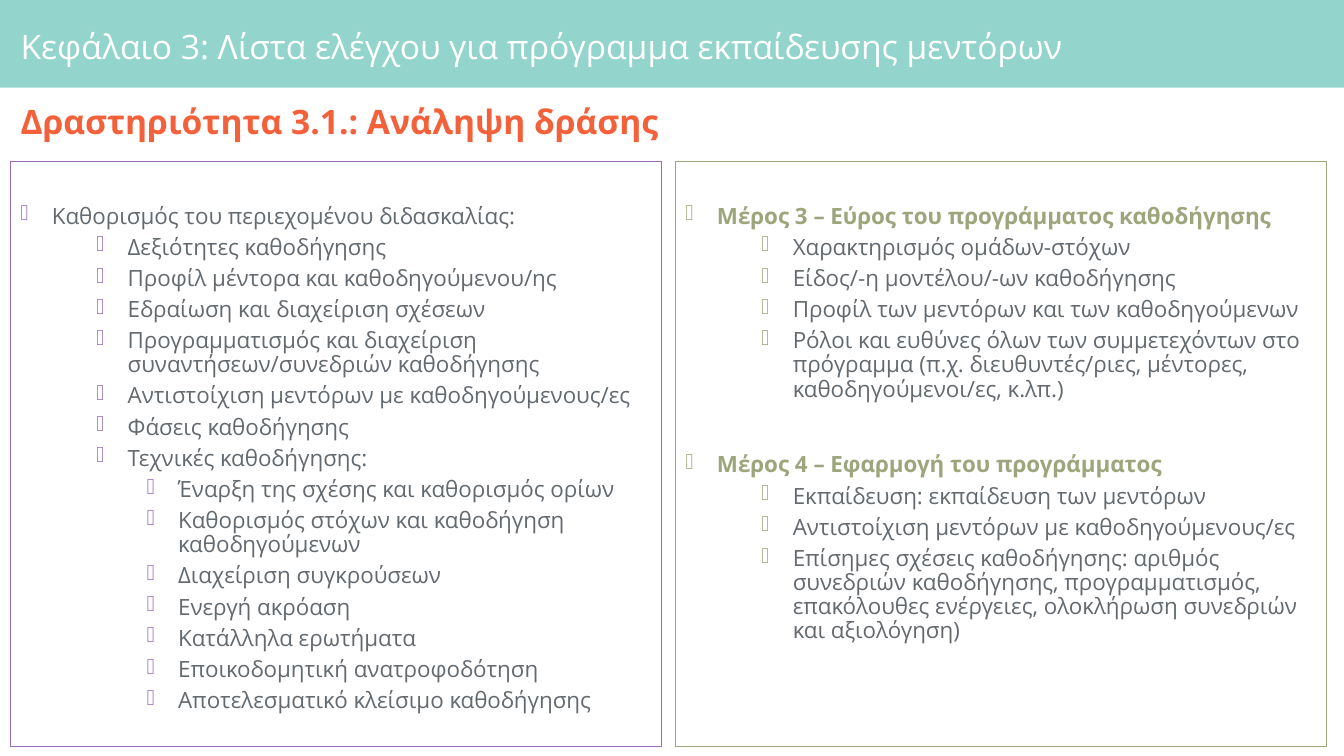
from pptx import Presentation
from pptx.dml.color import RGBColor
from pptx.enum import shapes, text
from pptx.oxml import parse_xml
from pptx.oxml.ns import nsdecls
from pptx.util import Cm, Pt

# Content: panel items are (level, text)
TITLE = "Κεφάλαιο 3: Λίστα ελέγχου για πρόγραμμα εκπαίδευσης μεντόρων"
SUBTITLE = "Δραστηριότητα 3.1.: Ανάληψη δράσης"
TEACHING_CONTENT = [
    (0, "Καθορισμός του περιεχομένου διδασκαλίας:"),
    (1, "Δεξιότητες καθοδήγησης"),
    (1, "Προφίλ μέντορα και καθοδηγούμενου/ης"),
    (1, "Εδραίωση και διαχείριση σχέσεων"),
    (1, "Προγραμματισμός και διαχείριση συναντήσεων/συνεδριών καθοδήγησης"),
    (1, "Αντιστοίχιση μεντόρων με καθοδηγούμενους/ες"),
    (1, "Φάσεις καθοδήγησης"),
    (1, "Τεχνικές καθοδήγησης:"),
    (2, "Έναρξη της σχέσης και καθορισμός ορίων"),
    (2, "Καθορισμός στόχων και καθοδήγηση καθοδηγούμενων"),
    (2, "Διαχείριση συγκρούσεων"),
    (2, "Ενεργή ακρόαση"),
    (2, "Κατάλληλα ερωτήματα"),
    (2, "Εποικοδομητική ανατροφοδότηση"),
    (2, "Αποτελεσματικό κλείσιμο καθοδήγησης"),
]
PROGRAMME_PARTS = [
    (0, "Μέρος 3 – Εύρος του προγράμματος καθοδήγησης"),
    (1, "Χαρακτηρισμός ομάδων-στόχων"),
    (1, "Είδος/-η μοντέλου/-ων καθοδήγησης"),
    (1, "Προφίλ των μεντόρων και των καθοδηγούμενων"),
    (1, "Ρόλοι και ευθύνες όλων των συμμετεχόντων στο πρόγραμμα "
        "(π.χ. διευθυντές/ριες, μέντορες, καθοδηγούμενοι/ες, κ.λπ.)"),
    (0, "Μέρος 4 – Εφαρμογή του προγράμματος"),
    (1, "Εκπαίδευση: εκπαίδευση των μεντόρων"),
    (1, "Αντιστοίχιση μεντόρων με καθοδηγούμενους/ες"),
    (1, "Επίσημες σχέσεις καθοδήγησης: αριθμός συνεδριών καθοδήγησης, "
        "προγραμματισμός, επακόλουθες ενέργειες, ολοκλήρωση συνεδριών και αξιολόγηση)"),
]

THEME = {
    "font": "Open Sans", "heading": 24, "body": 16, "line_spacing": 0.9,
    "band": "93D4CC", "white": "FFFFFF", "orange": "F2613A",
    "grey": "636A6F", "purple": "9869BD", "olive": "9DA57C",
}
# (items, accent, heading colour, bold headings)
PANELS = [
    (TEACHING_CONTENT, "purple", "grey", False),
    (PROGRAMME_PARTS, "olive", "olive", True),
]

# Layout in centimetres
SLIDE_WIDTH, SLIDE_HEIGHT = 33.87, 19.05
MARGIN, PANEL_TOP, PANEL_WIDTH, PANEL_HEIGHT, PANEL_STEP = 0.27, 4.06, 16.41, 14.76, 16.76
LEVEL_INDENT = [0.79, 2.7, 3.97]
BULLET_HANG = 0.79
SPACE_BEFORE = [10, 5, 5]
PART_GAP = 37


def colour(name):
    return RGBColor.from_string(THEME[name])


def set_frame(shape, anchor, insets):
    frame = shape.text_frame
    frame.word_wrap = True
    frame.vertical_anchor = anchor
    frame.margin_left, frame.margin_top, frame.margin_right, frame.margin_bottom = map(Cm, insets)
    return frame


def write(paragraph, words, size, colour_name, bold=False):
    paragraph.line_spacing = THEME["line_spacing"]
    run = paragraph.add_run()
    run.text = words
    run.font.name = THEME["font"]
    run.font.size = Pt(THEME[size])
    run.font.bold = bold
    run.font.color.rgb = colour(colour_name)


def add_checkbox(paragraph, level, accent):
    properties = paragraph._p.get_or_add_pPr()
    properties.set("marL", str(Cm(LEVEL_INDENT[level])))
    properties.set("indent", str(-Cm(BULLET_HANG)))
    for tag in (f'<a:buClr {nsdecls("a")}><a:srgbClr val="{THEME[accent]}"/></a:buClr>',
                f'<a:buFont {nsdecls("a")} typeface="OpenSymbol"/>',
                f'<a:buChar {nsdecls("a")} char="🗹"/>'):
        properties.append(parse_xml(tag))


def add_rectangle(slide, left, top, width, height):
    shape = slide.shapes.add_shape(shapes.MSO_SHAPE.RECTANGLE, *map(Cm, (left, top, width, height)))
    shape.shadow.inherit = False
    return shape


def add_heading(slide, box, insets, words, colour_name, bold, alignment):
    shape = slide.shapes.add_textbox(*map(Cm, box))
    paragraph = set_frame(shape, text.MSO_ANCHOR.MIDDLE, insets).paragraphs[0]
    paragraph.alignment = alignment
    write(paragraph, words, "heading", colour_name, bold)


def add_panel(slide, left, items, accent, heading_colour, bold):
    panel = add_rectangle(slide, left, PANEL_TOP, PANEL_WIDTH, PANEL_HEIGHT)
    panel.fill.background()
    panel.line.color.rgb = colour(accent)
    panel.line.width = Pt(0.75)
    frame = set_frame(panel, text.MSO_ANCHOR.TOP, (0.25, 1.1, 0.25, 0.13))
    for index, (level, words) in enumerate(items):
        paragraph = frame.paragraphs[0] if index == 0 else frame.add_paragraph()
        paragraph.alignment = text.PP_ALIGN.LEFT
        paragraph.level = level
        is_heading = level == 0
        if index:
            paragraph.space_before = Pt(PART_GAP if is_heading else SPACE_BEFORE[level])
        write(paragraph, words, "body", heading_colour if is_heading else "grey", bold and is_heading)
        add_checkbox(paragraph, level, accent)


def main():
    presentation = Presentation()
    presentation.slide_width, presentation.slide_height = Cm(SLIDE_WIDTH), Cm(SLIDE_HEIGHT)
    slide = presentation.slides.add_slide(presentation.slide_layouts[6])

    # Title band
    band = add_rectangle(slide, 0, 0, SLIDE_WIDTH, 2.21)
    band.fill.solid()
    band.fill.fore_color.rgb = colour("band")
    band.line.fill.background()
    add_heading(slide, (MARGIN, 0.23, 33.6, 1.98), (0.25, 0.15, 0.15, 0.15),
                TITLE, "white", False, text.PP_ALIGN.LEFT)

    # Activity heading
    add_heading(slide, (MARGIN, 2.36, 33.17, 1.52), (0.25, 0.13, 0.25, 0.13),
                SUBTITLE, "orange", True, text.PP_ALIGN.JUSTIFY)

    # Checklist panels
    for column, (items, accent, heading_colour, bold) in enumerate(PANELS):
        add_panel(slide, MARGIN + column * PANEL_STEP, items, accent, heading_colour, bold)

    presentation.save("out.pptx")


if __name__ == "__main__":
    main()
